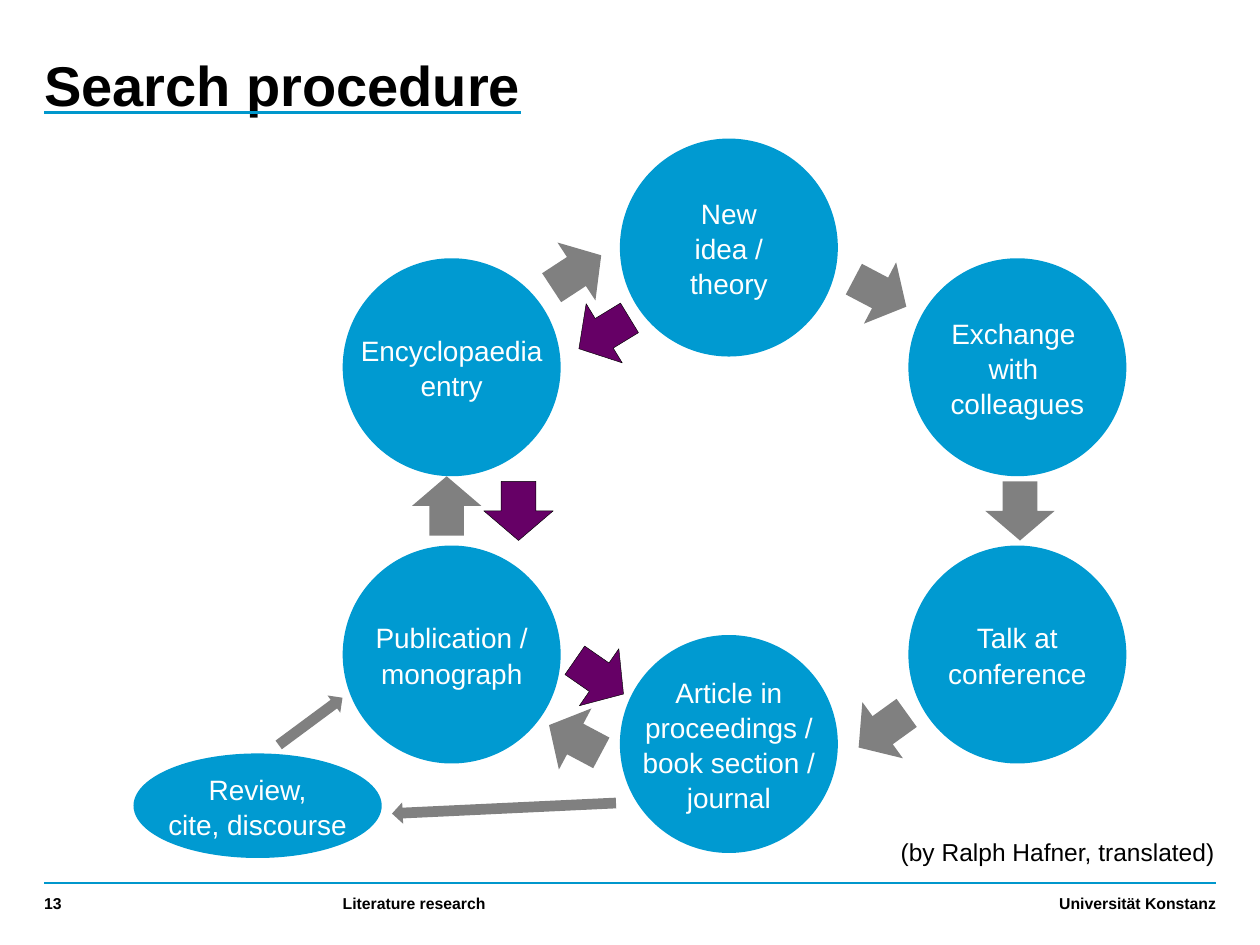
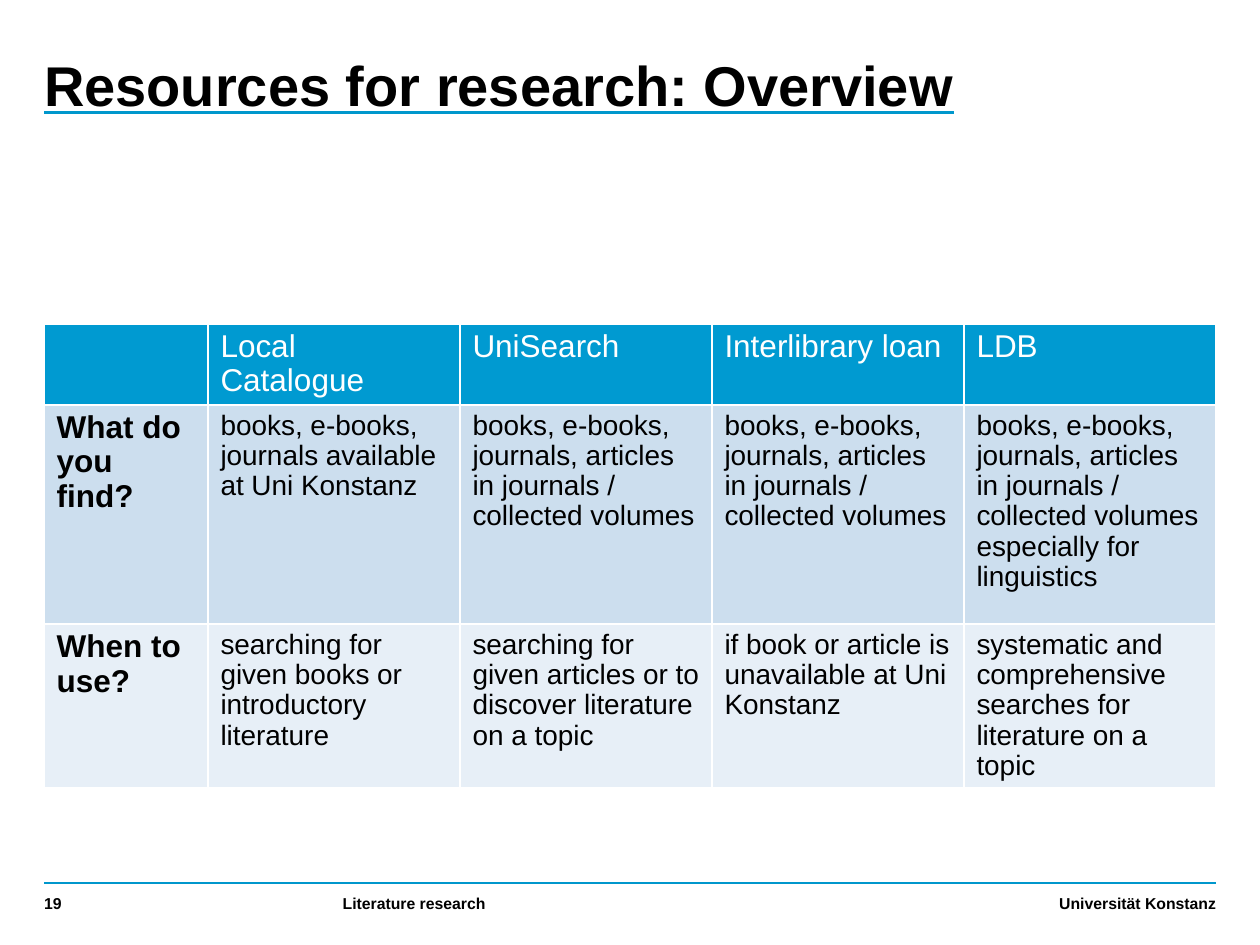
from lxml import etree
from pptx import Presentation
from pptx.dml.color import RGBColor
from pptx.enum.shapes import MSO_CONNECTOR, MSO_SHAPE
from pptx.enum.text import MSO_ANCHOR, MSO_AUTO_SIZE, PP_ALIGN
from pptx.oxml.ns import qn
from pptx.util import Inches, Pt

LEFT, CENTER, RIGHT = PP_ALIGN.LEFT, PP_ALIGN.CENTER, PP_ALIGN.RIGHT
TOP, MIDDLE, BOTTOM = MSO_ANCHOR.TOP, MSO_ANCHOR.MIDDLE, MSO_ANCHOR.BOTTOM
OVAL, ARROW = MSO_SHAPE.OVAL, MSO_SHAPE.RIGHT_ARROW
STRAIGHT, NO_FIT = MSO_CONNECTOR.STRAIGHT, MSO_AUTO_SIZE.NONE

COLORS = {
    "rule": "0097CC", "blue": "009AD1", "gray": "808080", "purple": "660066",
    "black": "000000", "white": "FFFFFF", "row dark": "CCDEEE", "row light": "E7EFF7",
}
RGB = {name: RGBColor.from_string(value) for name, value in COLORS.items()}


def style_text(frame, size, color="black", bold=False, align=LEFT, spacing=1.0):
    for para in frame.paragraphs:
        para.alignment = align
        para.line_spacing = spacing
        for span in para.runs:
            span.font.name = "Arial"
            span.font.size = Pt(size)
            span.font.bold = bold
            span.font.color.rgb = RGB[color]


def set_frame(frame, anchor, margins, wrap=True):
    frame.auto_size = NO_FIT
    frame.word_wrap = wrap
    frame.vertical_anchor = anchor
    frame.margin_left, frame.margin_top, frame.margin_right, frame.margin_bottom = [
        Inches(margin) for margin in margins]


deck = Presentation()
deck.slide_width, deck.slide_height = Inches(10), Inches(7.5)

pages = []
for title_text, title_width, number in [
    ("Search procedure", 6.93, "13"),
    ("Resources for research: Overview", 8.19, "19"),
]:
    page = deck.slides.add_slide(deck.slide_layouts[5])
    pages.append(page)

    rule = page.shapes.add_connector(STRAIGHT, Inches(0.35), Inches(7.01), Inches(9.65), Inches(7.01))
    rule.line.color.rgb = RGB["rule"]
    rule.line.width = Pt(1)
    etree.SubElement(rule._element.spPr, qn("a:effectLst"))

    title = page.shapes.title
    title.left, title.top = Inches(0.35), Inches(0.44)
    title.width, title.height = Inches(title_width), Inches(1.34)
    title.text_frame.text = title_text
    set_frame(title.text_frame, TOP, (0, 0, 0, 0))
    style_text(title.text_frame, 32, bold=True, spacing=0.95)
    font = title.text_frame.paragraphs[0].runs[0].font
    font.underline = True
    underline = etree.Element(qn("a:uFill"))
    underline_fill = etree.SubElement(underline, qn("a:solidFill"))
    etree.SubElement(underline_fill, qn("a:srgbClr"), val=COLORS["rule"])
    font._element.find(qn("a:latin")).addprevious(underline)

    for text, left, width, align in [
        (number, 0.35, 1.02, LEFT),
        ("Literature research", 2.72, 3.39, LEFT),
        ("Universität Konstanz", 6.26, 3.39, RIGHT),
    ]:
        footer = page.shapes.add_textbox(Inches(left), Inches(7.06), Inches(width), Inches(0.24))
        footer.text_frame.text = text
        set_frame(footer.text_frame, BOTTOM, (0, 0, 0, 0.06))
        style_text(footer.text_frame, 9, bold=True, align=align)

cycle_page, resources_page = pages

CIRCLE = (1.73, 1.73)
WIDE = (0.1, 0.05, 0.1, 0.05)
NARROW = (0.04, 0.05, 0.04, 0.05)
for text, left, top, (width, height), margins, wrap in [
    ("New idea / theory", 4.92, 1.1, CIRCLE, WIDE, True),
    ("Exchange \nwith \ncolleagues", 7.21, 2.05, CIRCLE, WIDE, False),
    ("Talk at\nconference", 7.21, 4.33, CIRCLE, WIDE, False),
    ("Article in\nproceedings /\n book section / \njournal", 4.92, 5.04, CIRCLE, NARROW, False),
    ("Publication /\nmonograph", 2.72, 4.33, CIRCLE, NARROW, False),
    ("Encyclopaedia\nentry", 2.72, 2.05, CIRCLE, NARROW, False),
    ("Review,\ncite, discourse", 1.06, 5.98, (1.97, 0.83), NARROW, False),
]:
    stage = cycle_page.shapes.add_shape(OVAL, Inches(left), Inches(top), Inches(width), Inches(height))
    stage.shadow.inherit = False
    stage.fill.solid()
    stage.fill.fore_color.rgb = RGB["blue"]
    stage.line.fill.background()
    stage.text_frame.text = text
    set_frame(stage.text_frame, MIDDLE, margins, wrap)
    style_text(stage.text_frame, 16, "white", align=CENTER, spacing=1.05)

BLOCK = (0.47, 0.55)
for left, top, (width, height), angle, color in [
    (6.75, 2.05, BLOCK, 27.7, "gray"),
    (7.86, 3.78, BLOCK, 90, "gray"),
    (6.77, 5.52, BLOCK, 144.2, "gray"),
    (3.31, 3.74, BLOCK, 270, "gray"),
    (4.34, 1.88, BLOCK, 326.8, "gray"),
    (4.33, 5.59, BLOCK, 208, "gray"),
    (3.11, 6.33, (1.78, 0.17), 177.3, "gray"),
    (2.15, 5.64, (0.63, 0.17), 323.5, "gray"),
    (4.56, 2.37, BLOCK, 148.6, "purple"),
    (3.88, 3.78, BLOCK, 90, "purple"),
    (4.52, 5.1, BLOCK, 34.7, "purple"),
]:
    arrow = cycle_page.shapes.add_shape(ARROW, Inches(left), Inches(top), Inches(width), Inches(height))
    arrow.rotation = angle
    arrow.shadow.inherit = False
    arrow.fill.solid()
    arrow.fill.fore_color.rgb = RGB[color]
    if color == "purple":
        arrow.line.color.rgb = RGB["black"]
        arrow.line.width = Pt(0.25)
    else:
        arrow.line.fill.background()

credit = cycle_page.shapes.add_textbox(Inches(7.05), Inches(6.59), Inches(2.7), Inches(0.34))
credit.text_frame.text = "(by Ralph Hafner, translated)"
set_frame(credit.text_frame, TOP, WIDE, False)
style_text(credit.text_frame, 14)

VOLUMES = "books, e-books, journals, articles in journals / collected volumes"
resource_rows = [
    ["", "Local Catalogue", "UniSearch", "Interlibrary loan", "LDB"],
    ["What do you find?", "books, e-books, journals available at Uni Konstanz",
     VOLUMES, VOLUMES, VOLUMES + " especially for linguistics"],
    ["When to use?", "searching for given books or introductory literature",
     "searching for given articles or to discover literature on a topic",
     "if book or article is unavailable at Uni Konstanz",
     "systematic and comprehensive searches for literature on a topic"],
]
row_heights = [0.62, 1.74, 1.27]
row_fills = ["blue", "row dark", "row light"]
column_widths = [1.3, 2, 2, 2, 2]

table = resources_page.shapes.add_table(
    len(resource_rows), len(column_widths), Inches(0.35), Inches(2.57),
    Inches(sum(column_widths)), Inches(sum(row_heights))).table
table.horz_banding = False
for column, width in zip(table.columns, column_widths):
    column.width = Inches(width)
for row_index, texts in enumerate(resource_rows):
    table.rows[row_index].height = Inches(row_heights[row_index])
    for column_index, text in enumerate(texts):
        cell = table.cell(row_index, column_index)
        cell.text_frame.text = text
        is_header, is_label = row_index == 0, column_index == 0
        style_text(cell.text_frame, 18 if is_header or is_label else 16,
                   "white" if is_header else "black",
                   bold=is_label and not is_header, spacing=0.97)
        properties = cell._tc.get_or_add_tcPr()
        for side in ("a:lnL", "a:lnR", "a:lnT", "a:lnB"):
            border = etree.SubElement(properties, qn(side), w=str(Pt(1)))
            border_fill = etree.SubElement(border, qn("a:solidFill"))
            etree.SubElement(border_fill, qn("a:srgbClr"), val=COLORS["white"])
        cell.fill.solid()
        cell.fill.fore_color.rgb = RGB[row_fills[row_index]]

deck.save("out.pptx")
